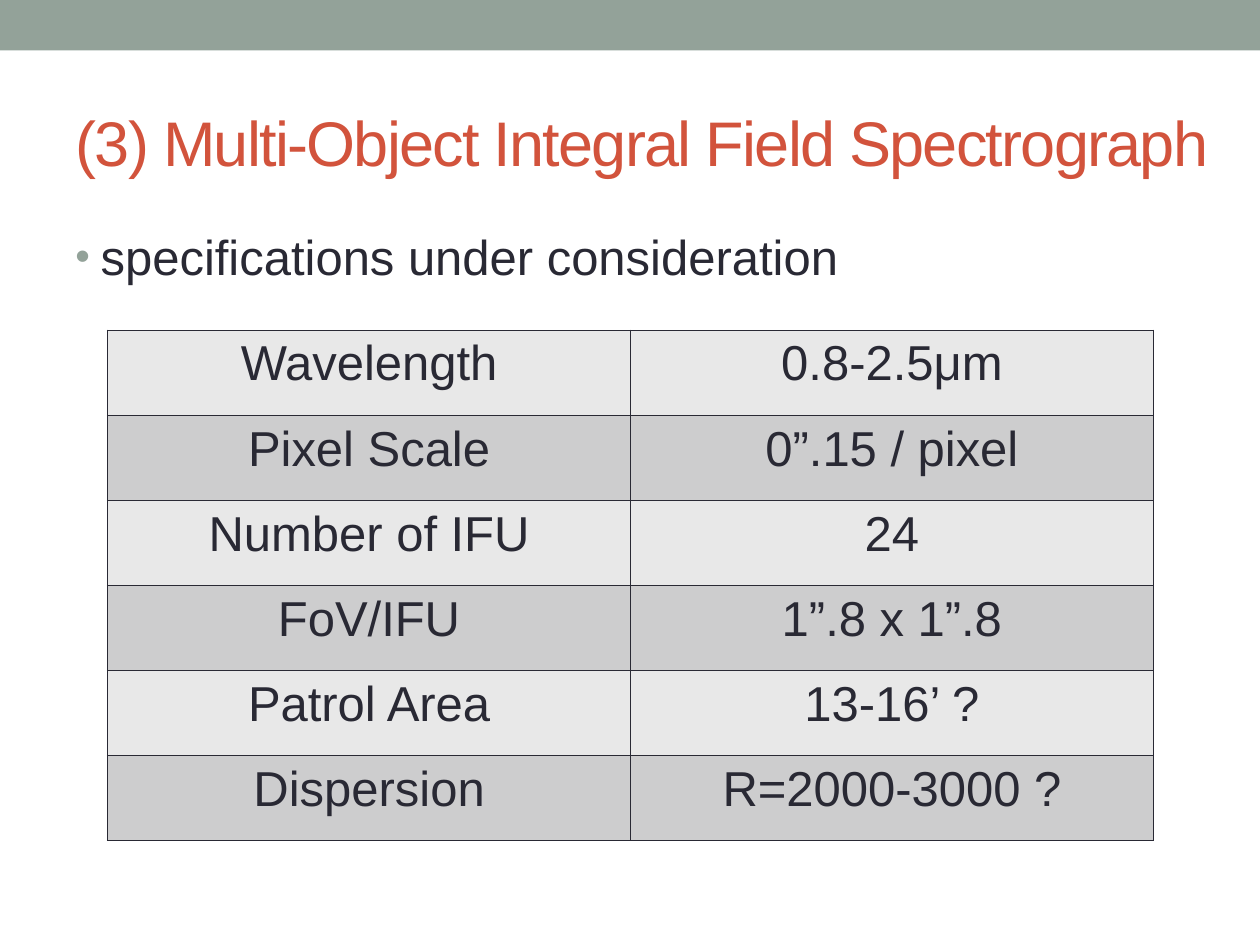
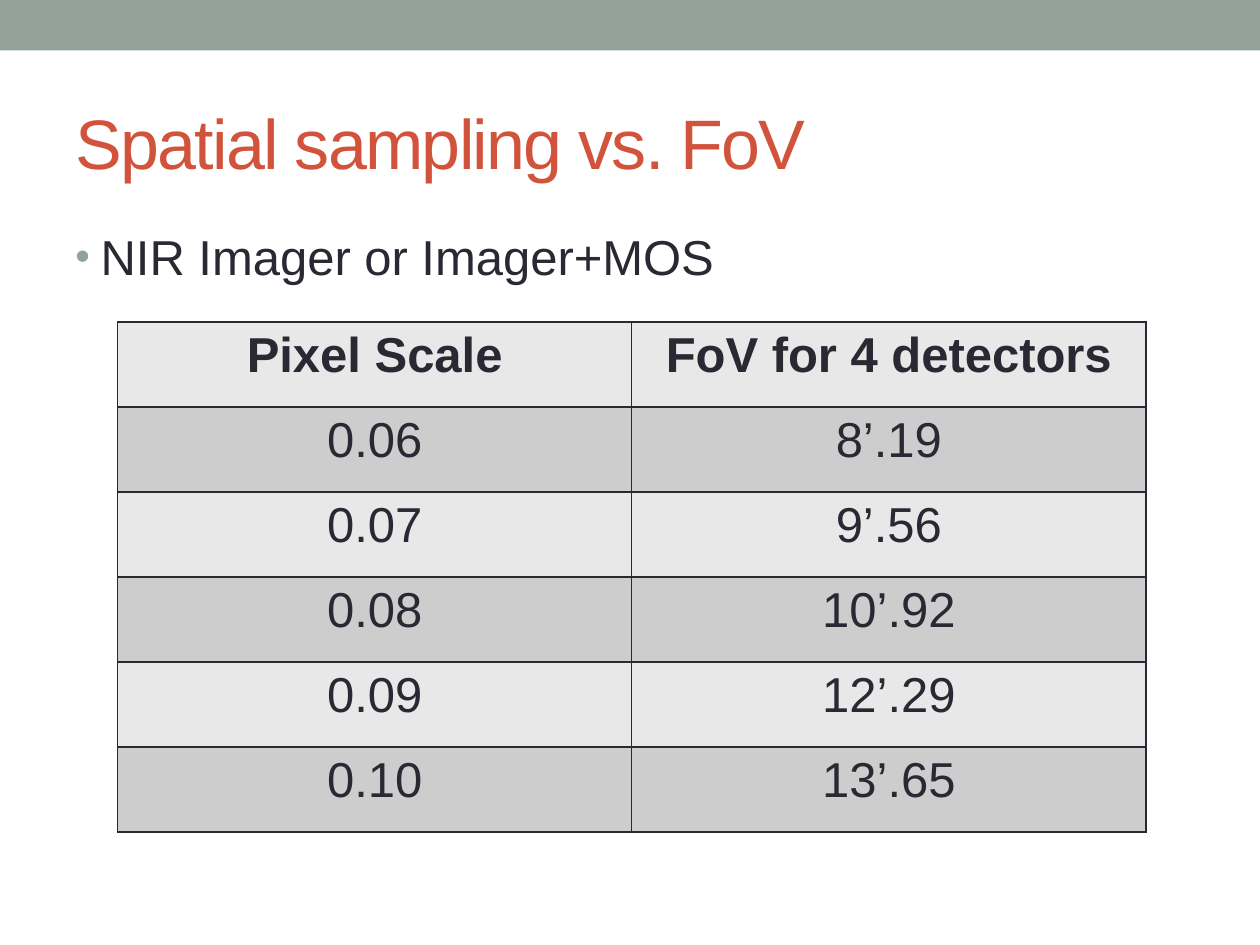
from lxml import etree
from pptx import Presentation
from pptx.dml.color import RGBColor
from pptx.enum.shapes import MSO_SHAPE
from pptx.enum.text import MSO_ANCHOR, MSO_AUTO_SIZE, PP_ALIGN
from pptx.oxml.ns import qn
from pptx.util import Cm, Pt

RECTANGLE = MSO_SHAPE.RECTANGLE
MIDDLE, TOP = MSO_ANCHOR.MIDDLE, MSO_ANCHOR.TOP
NO_FIT = MSO_AUTO_SIZE.NONE
LEFT, CENTER = PP_ALIGN.LEFT, PP_ALIGN.CENTER

FONT = "Arial"
SAGE, RUST, INK = "93A299", "D2533C", "292934"
ROW_FILLS = ("E8E8E8", "CDCDCE")

SLIDES = [
    {
        "title": "(3) Multi-Object Integral Field Spectrograph",
        "title_size": 36,
        "title_width": 23.37,
        "bullet": "specifications under consideration",
        "table_at": (2.17, 6.66, 21.08, 10.29),
        "bold_header": False,
        "rows": [
            ("Wavelength", "0.8-2.5μm"),
            ("Pixel Scale", "0”.15 / pixel"),
            ("Number of IFU", "24"),
            ("FoV/IFU", "1”.8 x 1”.8"),
            ("Patrol Area", "13-16’ ?"),
            ("Dispersion", "R=2000-3000 ?"),
        ],
    },
    {
        "title": "Spatial sampling vs. FoV",
        "title_size": 40,
        "title_width": 22.86,
        "bullet": "NIR Imager or Imager+MOS",
        "table_at": (2.37, 6.49, 20.73, 10.29),
        "bold_header": True,
        "rows": [
            ("Pixel Scale", "FoV for 4 detectors"),
            ("0.06", "8’.19"),
            ("0.07", "9’.56"),
            ("0.08", "10’.92"),
            ("0.09", "12’.29"),
            ("0.10", "13’.65"),
        ],
    },
]


def color(value):
    return RGBColor.from_string(value)


def write(frame, text, size, ink, align, bold=False):
    frame.text = text
    para = frame.paragraphs[0]
    para.alignment = align
    span = para.runs[0]
    span.font.name = FONT
    span.font.size = Pt(size)
    span.font.bold = bold
    span.font.color.rgb = color(ink)
    return para


deck = Presentation()
deck.slide_width, deck.slide_height = Cm(25.4), Cm(19.05)

for content in SLIDES:
    page = deck.slides.add_slide(deck.slide_layouts[5])

    band = page.shapes.add_shape(RECTANGLE, 0, 0, deck.slide_width, Cm(1.02))
    band.shadow.inherit = False
    band.fill.solid()
    band.fill.fore_color.rgb = color(SAGE)
    band.line.fill.background()

    title = page.shapes.title
    title.left, title.top = Cm(1.27), Cm(1.48)
    title.width, title.height = Cm(content["title_width"]), Cm(2.74)
    title.text_frame.auto_size = NO_FIT
    title.text_frame.vertical_anchor = MIDDLE
    para = write(title.text_frame, content["title"], content["title_size"], RUST, LEFT)
    para.runs[0].font._element.set("spc", "-100")

    box = page.shapes.add_textbox(Cm(1.27), Cm(4.45), Cm(22.86), Cm(13.54))
    box.text_frame.word_wrap = True
    para = write(box.text_frame, content["bullet"], 28, INK, LEFT)
    para.space_before = Pt(5.6)
    properties = para._p.get_or_add_pPr()
    properties.set("marL", str(Cm(0.51)))
    properties.set("indent", str(-Cm(0.51)))
    bullet_color = etree.SubElement(properties, qn("a:buClr"))
    etree.SubElement(bullet_color, qn("a:srgbClr"), val=SAGE)
    etree.SubElement(properties, qn("a:buSzPct"), val="85000")
    etree.SubElement(properties, qn("a:buFont"), typeface=FONT)
    etree.SubElement(properties, qn("a:buChar"), char="•")

    rows = content["rows"]
    place = [Cm(length) for length in content["table_at"]]
    table = page.shapes.add_table(len(rows), 2, *place).table
    table.first_row = False
    table.horz_banding = False
    for row_index, row in enumerate(rows):
        bold = content["bold_header"] and row_index == 0
        for column_index, text in enumerate(row):
            cell = table.cell(row_index, column_index)
            write(cell.text_frame, text, 28, INK, CENTER, bold)
            cell.vertical_anchor = TOP
            borders = cell._tc.get_or_add_tcPr()
            for side in ("a:lnL", "a:lnR", "a:lnT", "a:lnB"):
                border = etree.SubElement(borders, qn(side), w=str(Pt(1)))
                border_fill = etree.SubElement(border, qn("a:solidFill"))
                etree.SubElement(border_fill, qn("a:srgbClr"), val=INK)
            cell.fill.solid()
            cell.fill.fore_color.rgb = color(ROW_FILLS[row_index % 2])

deck.save("out.pptx")
